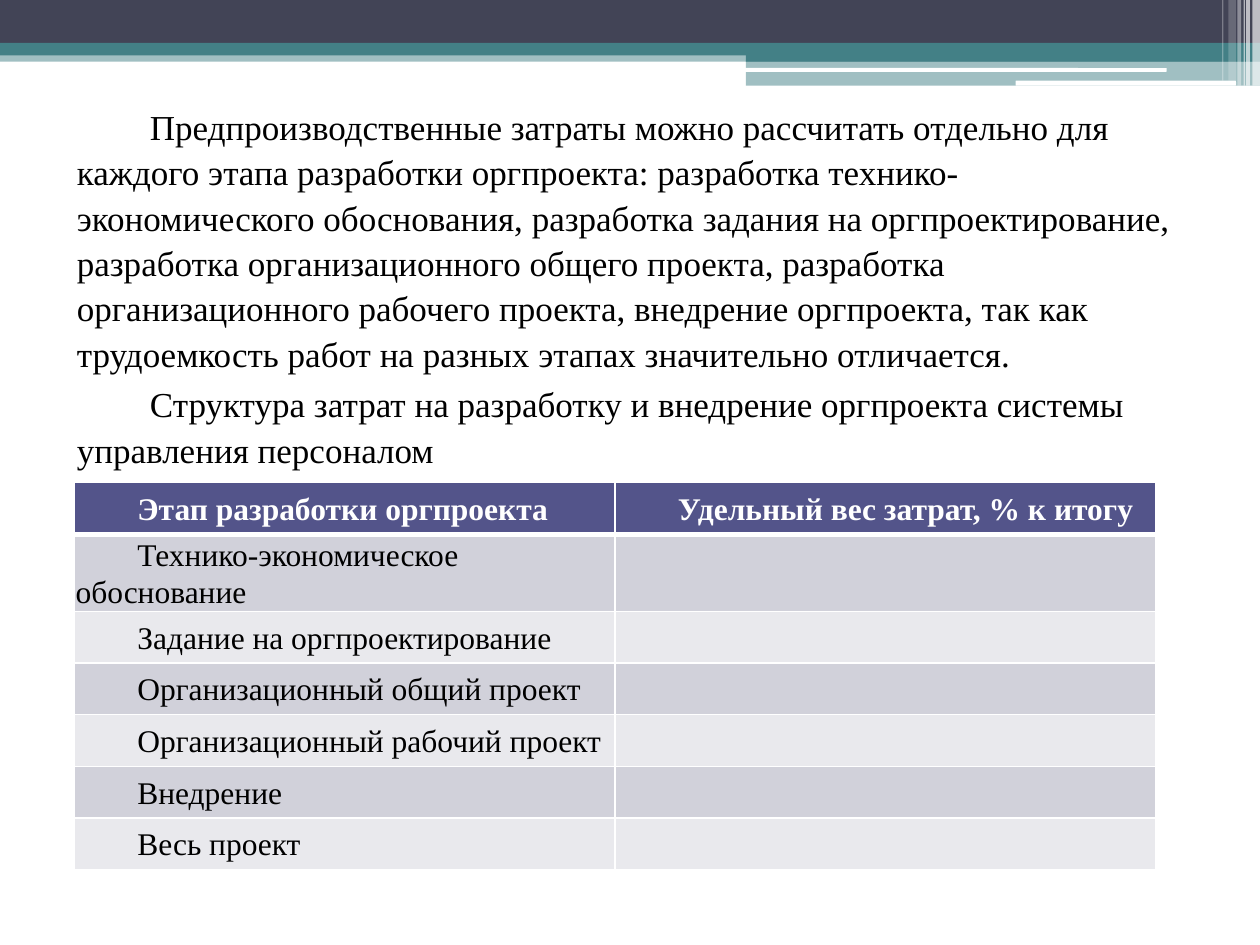
"""Build a slide on the cost structure of an organisational project."""
import pptx
import pptx.dml.color
import pptx.enum.shapes
import pptx.enum.text
import pptx.oxml
import pptx.oxml.ns
import pptx.util

HUES = {"ink": "000000", "white": "FFFFFF", "navy": "424456", "teal": "438086",
        "head": "53548A", "dark": "D1D1DA", "light": "E9E9ED"}
FONT = "Times New Roman"
COLS, ROWS = 1000, 750

BODY = [
    "Предпроизводственные затраты можно рассчитать отдельно для каждого этапа "
    "разработки оргпроекта: разработка технико-экономического обоснования, "
    "разработка задания на оргпроектирование, разработка организационного общего "
    "проекта, разработка организационного рабочего проекта, внедрение оргпроекта, "
    "так как трудоемкость работ на разных этапах значительно отличается.",
    "Структура затрат на разработку и внедрение оргпроекта системы управления персоналом",
]
TABLE = [
    ("Этап разработки оргпроекта", "Удельный вес затрат, % к итогу"),
    ("Технико-экономическое обоснование", ""),
    ("Задание на оргпроектирование", ""),
    ("Организационный общий проект", ""),
    ("Организационный рабочий проект", ""),
    ("Внедрение", ""),
    ("Весь проект", ""),
]
BARS = [
    ("RECTANGLE", (0, 40, 1000, 9), "teal", 50),
    ("RECTANGLE", (0, 0, 1000, 34), "navy", 100),
    ("RECTANGLE", (0, 34, 1000, 10), "teal", 100),
    ("RECTANGLE", (592, 39, 408, 10), "teal", 100),
    ("RECTANGLE", (592, 48, 408, 20), "teal", 50),
    ("ROUNDED_RECTANGLE", (591, 54, 335, 3), "white", 100),
    ("ROUNDED_RECTANGLE", (806, 64, 175, 4), "white", 100),
]
STRIPES = [(994, 6, 68, 65), (989, 3, 68, 65), (987, 1, 68, 60),
           (982, 3, 68, 40), (975, 6, 64, 20), (970, 1, 64, 30)]
BARS += [("RECTANGLE", (left, 0, wide, high), "white", alpha)
         for left, wide, high, alpha in STRIPES]

deck = pptx.Presentation()
deck.slide_width = pptx.util.Inches(10)
deck.slide_height = pptx.util.Inches(7.5)


def place(left, top, wide, high):
    """Turn grid units into slide lengths."""
    x, y = deck.slide_width / COLS, deck.slide_height / ROWS
    return [round(n) for n in (left * x, top * y, wide * x, high * y)]


def color(name):
    """Return the named colour."""
    return pptx.dml.color.RGBColor.from_string(HUES[name])


def write(para, text, size=18, hue="ink", bold=False, indent=0.49, space=1.07,
          before=0, align="LEFT"):
    """Put formatted text into a paragraph."""
    para.alignment = getattr(pptx.enum.text.PP_ALIGN, align)
    para.line_spacing = space
    para.space_before = pptx.util.Pt(before)
    props = para._p.get_or_add_pPr()
    props.set("marL", "0")
    props.set("indent", str(pptx.util.Inches(indent)))
    pptx.oxml.ns.qn("a:buNone")
    props.append(node("<a:buNone {ns}/>"))
    para.font.size = pptx.util.Pt(size)
    if text:
        run = para.add_run()
        run.text = text
        run.font.name, run.font.size, run.font.bold = FONT, pptx.util.Pt(size), bold
        run.font.color.rgb = color(hue)


def node(xml):
    """Parse a drawing element."""
    return pptx.oxml.parse_xml(xml.replace("{ns}", pptx.oxml.ns.nsdecls("a")))


def draw_bar(slide, kind, box, hue, alpha):
    """Draw one band of the header."""
    shape = slide.shapes.add_shape(
        getattr(pptx.enum.shapes.MSO_SHAPE, kind), *place(*box))
    shape.shadow.inherit = False
    shape.line.fill.background()
    shape.fill.solid()
    shape.fill.fore_color.rgb = color(hue)
    if alpha < 100:
        tone = shape._element.spPr.find(".//" + pptx.oxml.ns.qn("a:srgbClr"))
        tone.append(node(f'<a:alpha {{ns}} val="{alpha * 1000}"/>'))


def style_cell(cell, row):
    """Set fill, margins and borders of a cell."""
    cell.fill.solid()
    cell.fill.fore_color.rgb = color("head" if row == 0 else ("light", "dark")[row % 2])
    cell.vertical_anchor = pptx.enum.text.MSO_ANCHOR.MIDDLE
    inset = pptx.util.Inches(0.01)
    cell.margin_left = cell.margin_right = inset
    cell.margin_top = cell.margin_bottom = inset
    widths = {"L": 1, "R": 1, "T": 3 if row == 1 else 1, "B": 3 if row == 0 else 1}
    for spot, (side, wide) in enumerate(widths.items()):
        cell._tc.get_or_add_tcPr().insert(spot, node(
            f'<a:ln{side} {{ns}} w="{pptx.util.Pt(wide)}"><a:solidFill>'
            f'<a:srgbClr val="{HUES["white"]}"/></a:solidFill></a:ln{side}>'))


def main():
    """Build and save the deck."""
    slide = deck.slides.add_slide(deck.slide_layouts[1])
    title = slide.shapes.title._element
    title.getparent().remove(title)
    for bar in BARS:
        draw_bar(slide, *bar)

    body = slide.placeholders[1]
    body.left, body.top, body.width, body.height = place(51, 76, 900, 473)
    frame = body.text_frame
    frame.word_wrap = True
    frame.auto_size = pptx.enum.text.MSO_AUTO_SIZE.NONE
    for spot, text in enumerate(BODY):
        para = frame.add_paragraph() if spot else frame.paragraphs[0]
        write(para, text, size=20, indent=0.58, space=1.08, before=3)

    grid = slide.shapes.add_table(
        len(TABLE), len(TABLE[0]), *place(59, 383, 858, 41 * len(TABLE))).table
    for row, texts in enumerate(TABLE):
        for col, text in enumerate(texts):
            cell = grid.cell(row, col)
            style_cell(cell, row)
            write(cell.text_frame.paragraphs[0], text, bold=row == 0,
                  hue="ink" if row else "white", align="JUSTIFY")
    deck.save("out.pptx")


if __name__ == "__main__":
    main()
